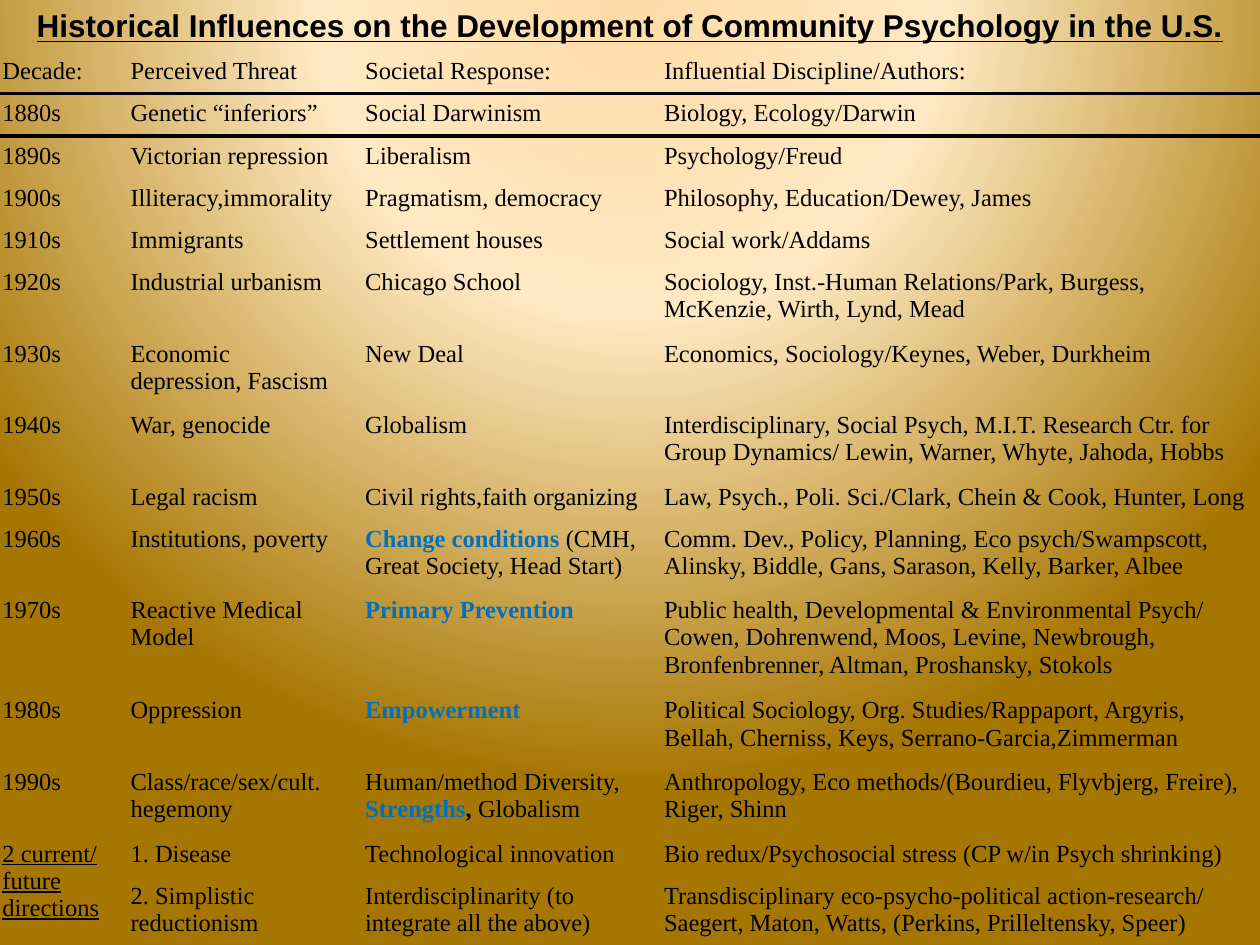
from dataclasses import dataclass

from lxml.etree import SubElement
from pptx import Presentation
from pptx.dml.color import RGBColor
from pptx.enum.text import MSO_ANCHOR, PP_ALIGN
from pptx.oxml import parse_xml
from pptx.oxml.ns import nsdecls, qn
from pptx.util import Pt

BLACK = RGBColor(0x00, 0x00, 0x00)
BLUE = RGBColor(0x00, 0x70, 0xC0)
PEACH = RGBColor(0xFF, 0xDB, 0xA9)
CREAM = RGBColor(0xFF, 0xE9, 0xC2)
BRONZE = RGBColor(0xA6, 0x76, 0x02)

NO_STYLE = "{2D5ABB26-0587-4C30-8999-92F81FD0307C}"
ONE_LINE, TWO_LINES, THREE_LINES, LAST = 24.1, 40.9, 57.2, 51.8
COLUMN_WIDTHS = (73.2, 134.1, 170.8, 354.1)
TABLE_LEFT, TABLE_TOP = -5.8, 29.5


@dataclass(frozen=True)
class Phrase:
    text: str
    color: RGBColor = BLACK
    bold: bool = False
    underline: bool = False


def key_idea(text: str) -> Phrase:
    return Phrase(text, color=BLUE, bold=True)


@dataclass(frozen=True)
class Era:
    decade: str | Phrase
    threat: str
    response: str | tuple[Phrase, ...]
    authors: str
    height: float = ONE_LINE


ERAS = [
    Era("Decade:", "Perceived Threat", "Societal Response:",
        "Influential Discipline/Authors:"),
    Era("1880s", "Genetic “inferiors”", "Social Darwinism", "Biology, Ecology/Darwin"),
    Era("1890s", "Victorian repression", "Liberalism", "Psychology/Freud"),
    Era("1900s", "Illiteracy,immorality", "Pragmatism, democracy",
        "Philosophy, Education/Dewey, James"),
    Era("1910s", "Immigrants", "Settlement houses", "Social work/Addams"),
    Era("1920s", "Industrial urbanism", "Chicago School",
        "Sociology, Inst.-Human Relations/Park, Burgess, "
        "McKenzie, Wirth, Lynd, Mead", TWO_LINES),
    Era("1930s", "Economic depression, Fascism", "New Deal",
        "Economics, Sociology/Keynes, Weber, Durkheim", TWO_LINES),
    Era("1940s", "War, genocide", "Globalism",
        "Interdisciplinary, Social Psych, M.I.T. Research Ctr. for "
        "Group Dynamics/ Lewin, Warner, Whyte, Jahoda, Hobbs", TWO_LINES),
    Era("1950s", "Legal racism", "Civil rights,faith organizing",
        "Law, Psych., Poli. Sci./Clark, Chein & Cook, Hunter, Long"),
    Era("1960s", "Institutions, poverty",
        (key_idea("Change conditions "), Phrase("(CMH, Great Society, Head Start)")),
        "Comm. Dev., Policy, Planning, Eco psych/Swampscott, "
        "Alinsky, Biddle, Gans, Sarason, Kelly, Barker, Albee", TWO_LINES),
    Era("1970s", "Reactive Medical Model", (key_idea("Primary Prevention"),),
        "Public health, Developmental & Environmental Psych/ "
        "Cowen, Dohrenwend, Moos, Levine, Newbrough, "
        "Bronfenbrenner, Altman, Proshansky, Stokols", THREE_LINES),
    Era("1980s", "Oppression", (key_idea("Empowerment"),),
        "Political Sociology, Org. Studies/Rappaport, Argyris, "
        "Bellah, Cherniss, Keys, Serrano-Garcia,Zimmerman", TWO_LINES),
    Era("1990s", "Class/race/sex/cult. hegemony",
        (Phrase("Human/method Diversity, "), key_idea("Strengths"),
         Phrase(", ", bold=True), Phrase("Globalism")),
        "Anthropology, Eco methods/(Bourdieu, Flyvbjerg, Freire), "
        "Riger, Shinn", TWO_LINES),
    Era(Phrase("2 current/ future directions", underline=True), "1. Disease",
        "Technological innovation",
        "Bio redux/Psychosocial stress (CP w/in Psych shrinking)"),
    Era("", "2. Simplistic reductionism",
        "Interdisciplinarity (to integrate all the above)",
        "Transdisciplinary eco-psycho-political action-research/ "
        "Saegert, Maton, Watts, (Perkins, Prilleltensky, Speer)", LAST),
]


def add_text(paragraph, text: str, *, font: str = "Times New Roman", size: float = 14,
             color: RGBColor = BLACK, bold: bool = False, underline: bool = False) -> None:
    run = paragraph.add_run()
    run.text = text
    run.font.name = font
    run.font.size = Pt(size)
    run.font.color.rgb = color
    run.font.bold = bold
    run.font.underline = underline


def set_background(slide) -> None:
    """Radial gradient centred above the slide."""
    stops = "".join(
        f'<a:gs pos="{percent * 1000}"><a:srgbClr val="{color}"/></a:gs>'
        for percent, color in ((0, PEACH), (40, CREAM), (100, BRONZE)))
    background = parse_xml(
        f'<p:bg {nsdecls("p", "a")}><p:bgPr><a:gradFill rotWithShape="0">'
        f'<a:gsLst>{stops}</a:gsLst><a:path path="circle">'
        '<a:fillToRect l="50000" t="-80000" r="50000" b="180000"/></a:path>'
        '</a:gradFill><a:effectLst/></p:bgPr></p:bg>')
    slide.element.cSld.insert(0, background)


def add_title(slide) -> None:
    title = slide.shapes.title
    title.left, title.top, title.width, title.height = Pt(12), Pt(0), Pt(696), Pt(29)
    frame = title.text_frame
    frame.word_wrap = True
    frame.vertical_anchor = MSO_ANCHOR.MIDDLE
    frame.margin_left = frame.margin_right = frame.margin_top = frame.margin_bottom = Pt(0)
    heading = frame.paragraphs[0]
    heading.alignment = PP_ALIGN.CENTER
    heading.line_spacing = 1.0
    heading.space_before = Pt(0)
    add_text(heading,
             "Historical Influences on the Development of Community Psychology in the U.S.",
             font="Arial", size=18, bold=True, underline=True)


def add_rule(cell, edge: str) -> None:
    """Draw a black 2 pt border on one edge (lnT or lnB) of a cell."""
    border = parse_xml(
        f'<a:{edge} {nsdecls("a")} w="{Pt(2)}"><a:solidFill><a:srgbClr val="{BLACK}"/>'
        f'</a:solidFill><a:prstDash val="solid"/></a:{edge}>')
    cell._tc.get_or_add_tcPr().insert(0, border)


def fill_cell(cell, content: str | Phrase | tuple[Phrase, ...]) -> None:
    cell.fill.background()
    if isinstance(content, str):
        content = Phrase(content)
    phrases = content if isinstance(content, tuple) else (content,)
    for phrase in phrases:
        if phrase.text:
            add_text(cell.text_frame.paragraphs[0], phrase.text, color=phrase.color,
                     bold=phrase.bold, underline=phrase.underline)


def add_era_table(slide) -> None:
    frame = slide.shapes.add_table(
        len(ERAS), len(COLUMN_WIDTHS), Pt(TABLE_LEFT), Pt(TABLE_TOP),
        Pt(sum(COLUMN_WIDTHS)), Pt(sum(era.height for era in ERAS)))
    table = frame.table
    table.first_row = table.horz_banding = False
    properties = table._tbl.tblPr
    style = properties.find(qn("a:tableStyleId"))
    if style is None:
        style = SubElement(properties, qn("a:tableStyleId"))
    style.text = NO_STYLE

    for column, width in zip(table.columns, COLUMN_WIDTHS):
        column.width = Pt(width)
    for row, era in zip(table.rows, ERAS):
        row.height = Pt(era.height)
        for cell, content in zip(row.cells,
                                 (era.decade, era.threat, era.response, era.authors)):
            fill_cell(cell, content)
    for column in range(len(COLUMN_WIDTHS)):
        add_rule(table.cell(0, column), "lnB")
        add_rule(table.cell(1, column), "lnT")
    last = len(ERAS) - 1
    table.cell(last - 1, 0).merge(table.cell(last, 0))


def main() -> None:
    presentation = Presentation()
    presentation.slide_width, presentation.slide_height = Pt(720), Pt(540)
    slide = presentation.slides.add_slide(presentation.slide_layouts[5])
    set_background(slide)
    add_title(slide)
    add_era_table(slide)
    presentation.save("out.pptx")


if __name__ == "__main__":
    main()
